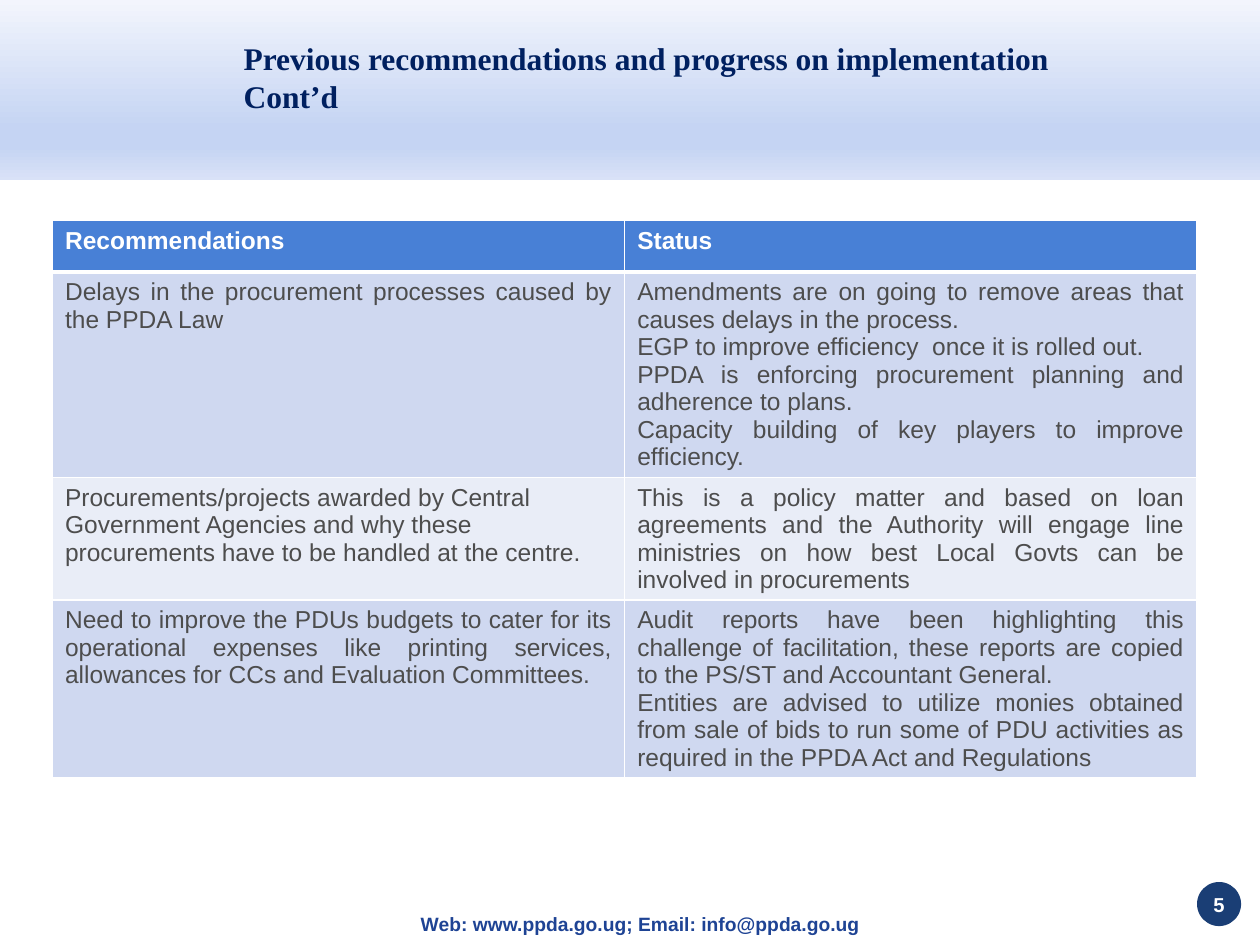
from dataclasses import dataclass

from lxml import etree
from pptx import Presentation
from pptx.dml.color import RGBColor
from pptx.enum import shapes, text
from pptx.oxml import ns
from pptx.util import Pt

WHITE, NAVY = "FFFFFF", "002060"
HEADER, BAND_DARK, BAND_LIGHT, BODY = "4880D6", "CFD8F0", "E9EDF7", "4D4D4D"
LEFT, CENTER, JUSTIFY = text.PP_ALIGN.LEFT, text.PP_ALIGN.CENTER, text.PP_ALIGN.JUSTIFY
GRADIENT = [(0, "F9FAFE"), (74, "C5D4F3"), (83, "C5D4F3"), (100, "D9E2F7")]


@dataclass
class Row:
    height: float
    fill: str
    recommendation: list[str]
    status: list[str]
    align: text.PP_ALIGN = JUSTIFY
    header: bool = False


ROWS = [
    Row(29.5, HEADER, ["Recommendations"], ["Status"], LEFT, True),
    Row(117, BAND_DARK,
        ["Delays in the procurement processes caused by the PPDA Law"],
        ["Amendments are on going to remove areas that causes delays in the process.",
         "EGP to improve efficiency  once it is rolled out.",
         "PPDA is enforcing procurement planning and adherence to plans.",
         "Capacity building of key players to improve efficiency."]),
    Row(70, BAND_LIGHT,
        ["Procurements/projects awarded by Central Government Agencies and why these "
         "procurements have to be handled at the centre."],
        ["This is a policy matter and based on loan agreements and the Authority will engage "
         "line ministries on how best Local Govts can be involved in procurements"], LEFT),
    Row(101, BAND_DARK,
        ["Need to improve the PDUs budgets to cater for its operational expenses like "
         "printing services, allowances for CCs and Evaluation Committees."],
        ["Audit reports have been highlighting this challenge of facilitation, these reports "
         "are copied to the PS/ST and Accountant General.",
         "Entities are advised to utilize monies obtained from sale of bids to run some of "
         "PDU activities as required in the PPDA Act and Regulations"]),
]


def rgb(color: str) -> RGBColor:
    return RGBColor.from_string(color)


def write(tf, paragraphs: list[str], *, size: float, color: str, bold: bool = True,
          font: str = "Arial", align=LEFT) -> None:
    for i, line in enumerate(paragraphs):
        p = tf.paragraphs[0] if i == 0 else tf.add_paragraph()
        p.alignment = align
        r = p.add_run()
        r.text = line
        r.font.size, r.font.name, r.font.bold = Pt(size), font, bold
        r.font.color.rgb = rgb(color)


def add_solid_fill(parent, color: str) -> None:
    fill = etree.SubElement(parent, ns.qn("a:solidFill"))
    etree.SubElement(fill, ns.qn("a:srgbClr"), val=color)


def add_header_band(s) -> None:
    sp = s.shapes.add_shape(shapes.MSO_SHAPE.RECTANGLE, Pt(-1.5), Pt(-10), Pt(722), Pt(113))
    sp.shadow.inherit = False
    sp.line.fill.background()
    sp.fill.gradient()
    sp.fill.gradient_angle = 270
    stops = sp._element.spPr.find(".//" + ns.qn("a:gsLst"))
    for old in list(stops):
        stops.remove(old)
    for position, color in GRADIENT:
        stop = etree.SubElement(stops, ns.qn("a:gs"), pos=str(position * 1000))
        etree.SubElement(stop, ns.qn("a:srgbClr"), val=color)
    s.shapes._spTree.insert(2, sp._element)  # behind the title


def add_title(s) -> None:
    sp = s.shapes.title
    sp.left, sp.top, sp.width, sp.height = Pt(132), Pt(24), Pt(516), Pt(40)
    tf = sp.text_frame
    tf.word_wrap, tf.auto_size = True, text.MSO_AUTO_SIZE.NONE
    tf.vertical_anchor = text.MSO_ANCHOR.MIDDLE
    write(tf, ["Previous recommendations and progress on implementation Cont’d"],
          size=18, color=NAVY, font="Times New Roman")


def set_borders(cell, widths: dict[str, float]) -> None:
    """Draw white borders; call before the cell is filled."""
    tc_pr = cell._tc.get_or_add_tcPr()
    for side, width in widths.items():
        ln = etree.SubElement(tc_pr, ns.qn(f"a:ln{side}"), w=str(Pt(width)))
        add_solid_fill(ln, WHITE)


def add_table(s, rows: list[Row]) -> None:
    total = sum(row.height for row in rows)
    table = s.shapes.add_table(len(rows), 2, Pt(30), Pt(126), Pt(654), Pt(total)).table
    table.first_row = table.horz_banding = False
    for i, row in enumerate(rows):
        table.rows[i].height = Pt(row.height)
        top = 3 if i and rows[i - 1].header else 1
        bottom = 3 if row.header else 1
        columns = [(row.recommendation, row.align),
                   (row.status, LEFT if row.header else JUSTIFY)]
        for j, (paragraphs, align) in enumerate(columns):
            cell = table.cell(i, j)
            set_borders(cell, {"L": 1, "R": 1, "T": top, "B": bottom})
            cell.fill.solid()
            cell.fill.fore_color.rgb = rgb(row.fill)
            write(cell.text_frame, paragraphs, size=14, bold=row.header,
                  color=WHITE if row.header else BODY, align=align)


def add_footer(s) -> None:
    tf = s.shapes.add_textbox(Pt(192), Pt(517.5), Pt(348), Pt(21)).text_frame
    tf.word_wrap = True
    tf.vertical_anchor = text.MSO_ANCHOR.MIDDLE
    write(tf, ["Web: www.ppda.go.ug; Email: info@ppda.go.ug"],
          size=11, color="1E4394", align=CENTER)


def add_page_badge(s, number: str) -> None:
    sp = s.shapes.add_shape(shapes.MSO_SHAPE.OVAL, Pt(684), Pt(504), Pt(25.2), Pt(25.2))
    sp.shadow.inherit = False
    sp.fill.solid()
    sp.fill.fore_color.rgb = rgb("1A3E75")
    sp.line.fill.background()
    tf = sp.text_frame
    tf.margin_left = tf.margin_right = tf.margin_top = tf.margin_bottom = Pt(2)
    tf.vertical_anchor = text.MSO_ANCHOR.MIDDLE
    write(tf, [number], size=11.5, color=WHITE, align=CENTER)


def main() -> None:
    prs = Presentation()
    prs.slide_width, prs.slide_height = Pt(720), Pt(540)
    s = prs.slides.add_slide(prs.slide_layouts[5])
    add_header_band(s)
    add_title(s)
    add_table(s, ROWS)
    add_footer(s)
    add_page_badge(s, "5")
    prs.save("out.pptx")


if __name__ == "__main__":
    main()
